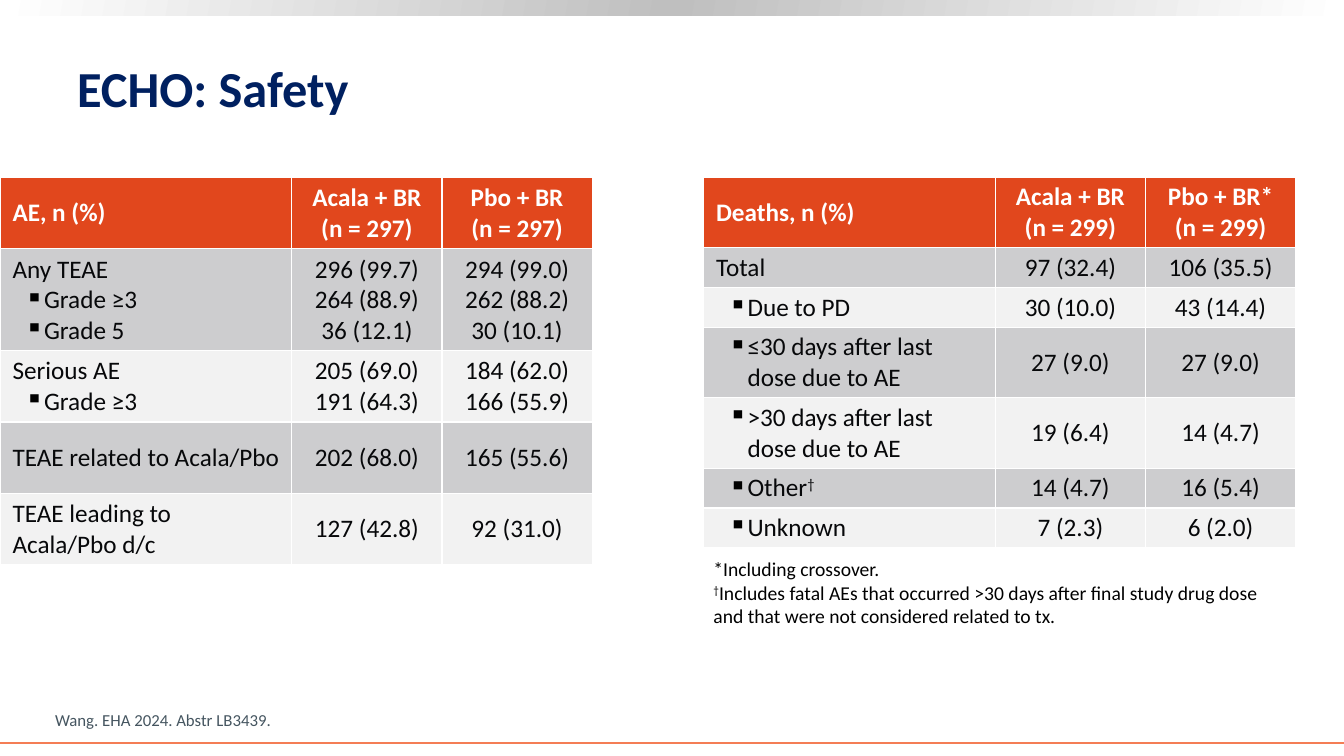
from copy import deepcopy

from lxml.etree import SubElement
from pptx import Presentation
from pptx.dml.color import RGBColor
from pptx.enum.shapes import MSO_CONNECTOR, MSO_SHAPE
from pptx.enum.text import MSO_ANCHOR, PP_ALIGN
from pptx.oxml.ns import qn
from pptx.util import Emu, Pt

EMU_PER_PX = 9525
SLIDE_WIDTH, SLIDE_HEIGHT = 1280, 720
LINE_HEIGHT = 29
COLUMN_WIDTHS = (278, 143, 143)
FONT = "Calibri"
BULLET = "▪"
DAGGER = "†"

WHITE = RGBColor(0xFF, 0xFF, 0xFF)
BLACK = RGBColor(0x00, 0x00, 0x00)
SILVER = RGBColor(0xBF, 0xBF, 0xBF)
NAVY = RGBColor(0x00, 0x20, 0x60)
SLATE = RGBColor(0x45, 0x55, 0x60)
CORAL = RGBColor(0xF4, 0x7D, 0x55)
ORANGE = RGBColor(0xE1, 0x47, 0x1D)
INK = RGBColor(0x07, 0x08, 0x0A)
DARK_BAND = RGBColor(0xCD, 0xCD, 0xCF)
LIGHT_BAND = RGBColor(0xF2, 0xF2, 0xF2)

ADVERSE_EVENTS = [
    (["AE, n (%)"], ["Acala + BR", "(n = 297)"], ["Pbo + BR", "(n = 297)"]),
    (["Any TEAE", "▪Grade ≥3", "▪Grade 5"],
     ["296 (99.7)", "264 (88.9)", "36 (12.1)"],
     ["294 (99.0)", "262 (88.2)", "30 (10.1)"]),
    (["Serious AE", "▪Grade ≥3"],
     ["205 (69.0)", "191 (64.3)"],
     ["184 (62.0)", "166 (55.9)"]),
    (["TEAE related to Acala/Pbo"], ["202 (68.0)"], ["165 (55.6)"]),
    (["TEAE leading to Acala/Pbo d/c"], ["127 (42.8)"], ["92 (31.0)"]),
]
ADVERSE_EVENT_LINES = (2, 3, 2, 2, 2)

DEATHS = [
    (["Deaths, n (%)"], ["Acala + BR", "(n = 299)"], ["Pbo + BR*", "(n = 299)"]),
    (["Total"], ["97 (32.4)"], ["106 (35.5)"]),
    (["▪Due to PD"], ["30 (10.0)"], ["43 (14.4)"]),
    (["▪≤30 days after last dose due to AE"], ["27 (9.0)"], ["27 (9.0)"]),
    (["▪>30 days after last dose due to AE"], ["19 (6.4)"], ["14 (4.7)"]),
    (["▪Other†"], ["14 (4.7)"], ["16 (5.4)"]),
    (["▪Unknown"], ["7 (2.3)"], ["6 (2.0)"]),
]
DEATH_LINES = (2, 1, 1, 2, 2, 1, 1)

FOOTNOTES = [
    "*Including crossover.",
    "†Includes fatal AEs that occurred >30 days after final study drug dose "
    "and that were not considered related to tx.",
]


def px(length):
    return Emu(length * EMU_PER_PX)


def add_bullet(paragraph):
    properties = paragraph._p.get_or_add_pPr()
    properties.set("marL", str(px(30)))
    properties.set("indent", str(px(-18)))
    color = SubElement(properties, qn("a:buClr"))
    SubElement(color, qn("a:srgbClr")).set("val", str(BLACK))
    SubElement(properties, qn("a:buChar")).set("char", BULLET)


def fill_text(text_frame, lines, size, color, bold=False, alignment=PP_ALIGN.LEFT):
    for index, line in enumerate(lines):
        paragraph = text_frame.add_paragraph() if index else text_frame.paragraphs[0]
        paragraph.alignment = alignment
        if line.startswith(BULLET):
            add_bullet(paragraph)
        for part in line.removeprefix(BULLET).partition(DAGGER):
            if not part:
                continue
            run = paragraph.add_run()
            run.text = part
            run.font.name = FONT
            run.font.size = Pt(size)
            run.font.bold = bold
            run.font.color.rgb = color
            if part == DAGGER:
                run.font._element.set("baseline", "30000")


def add_text(slide, box, lines, size, color, bold=False, anchor=MSO_ANCHOR.TOP):
    text_frame = slide.shapes.add_textbox(*map(px, box)).text_frame
    text_frame.word_wrap = True
    text_frame.vertical_anchor = anchor
    fill_text(text_frame, lines, size, color, bold)


def add_top_band(slide, box):
    band = slide.shapes.add_shape(MSO_SHAPE.RECTANGLE, *map(px, box))
    band.shadow.inherit = False
    band.line.fill.background()
    band.fill.gradient()
    band.fill.gradient_angle = 170
    stop_list = band._element.spPr.find(".//" + qn("a:gsLst"))
    stop_list.append(deepcopy(stop_list[-1]))
    for stop, position, color in zip(
        band.fill.gradient_stops, (0, 0.5, 1), (WHITE, SILVER, WHITE)
    ):
        stop.position = position
        stop.color.rgb = color


def add_bottom_rule(slide, left, top, width):
    rule = slide.shapes.add_connector(
        MSO_CONNECTOR.STRAIGHT, px(left), px(top), px(left + width), px(top)
    )
    rule.line.color.rgb = CORAL
    rule.line.width = Pt(1.5)
    SubElement(rule._element.spPr, qn("a:effectLst"))


def add_safety_table(slide, left, top, rows, line_counts, single_row_height):
    heights = [single_row_height + LINE_HEIGHT * (count - 1) for count in line_counts]
    padding = (single_row_height - LINE_HEIGHT) // 2
    table = slide.shapes.add_table(
        len(rows), len(COLUMN_WIDTHS),
        px(left), px(top), px(sum(COLUMN_WIDTHS)), px(sum(heights)),
    ).table
    for column, width in zip(table.columns, COLUMN_WIDTHS):
        column.width = px(width)
    for row_index, (row, height) in enumerate(zip(rows, heights)):
        table.rows[row_index].height = px(height)
        is_header = row_index == 0
        band = DARK_BAND if row_index % 2 else LIGHT_BAND
        for column_index, lines in enumerate(row):
            cell = table.cell(row_index, column_index)
            cell.fill.solid()
            cell.fill.fore_color.rgb = ORANGE if is_header else band
            cell.vertical_anchor = MSO_ANCHOR.MIDDLE
            cell.margin_left = cell.margin_right = px(12)
            cell.margin_top = cell.margin_bottom = px(padding)
            fill_text(
                cell.text_frame, lines, 18, WHITE if is_header else INK, is_header,
                PP_ALIGN.CENTER if column_index else PP_ALIGN.LEFT,
            )


def build_safety_slide(presentation):
    slide = presentation.slides.add_slide(presentation.slide_layouts[6])
    add_top_band(slide, (0, 0, SLIDE_WIDTH, 15))
    add_bottom_rule(slide, 0, 708, SLIDE_WIDTH)
    add_text(slide, (64, 25, 1169, 116), ["ECHO: Safety"], 36, NAVY, True,
             MSO_ANCHOR.MIDDLE)
    add_safety_table(slide, 0, 169, ADVERSE_EVENTS, ADVERSE_EVENT_LINES, 39)
    add_safety_table(slide, 670, 169, DEATHS, DEATH_LINES, 38)
    add_text(slide, (670, 526, 568, 78), FOOTNOTES, 14, BLACK)
    add_text(slide, (43, 671, 825, 29), ["Wang. EHA 2024. Abstr LB3439."], 12, SLATE,
             anchor=MSO_ANCHOR.BOTTOM)


def main():
    presentation = Presentation()
    presentation.slide_width = px(SLIDE_WIDTH)
    presentation.slide_height = px(SLIDE_HEIGHT)
    build_safety_slide(presentation)
    presentation.save("out.pptx")


if __name__ == "__main__":
    main()
